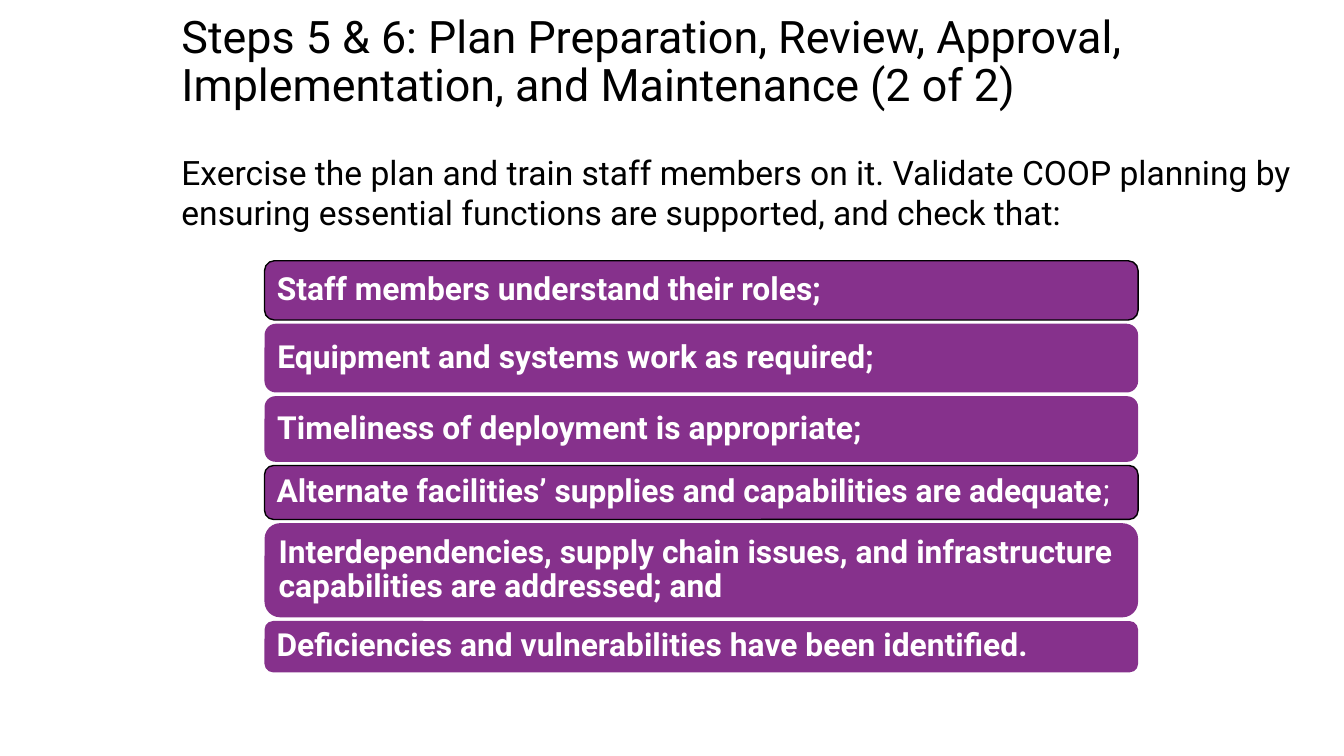
from dataclasses import dataclass

from pptx import Presentation
from pptx.dml.color import RGBColor
from pptx.enum.shapes import MSO_SHAPE as Preset
from pptx.enum.text import MSO_ANCHOR as Anchor, PP_ALIGN as Align
from pptx.util import Cm, Pt


@dataclass(frozen=True)
class Theme:
    font: str = "Roboto"
    text: RGBColor = RGBColor(0, 0, 0)
    bar: RGBColor = RGBColor(0x86, 0x31, 0x8C)
    bar_text: RGBColor = RGBColor(255, 255, 255)
    title_size: int = 24
    body_size: int = 18
    bar_size: int = 17


THEME = Theme()
TITLE = ("Steps 5 & 6: Plan Preparation, Review, Approval, "
         "Implementation, and Maintenance (2 of 2)")
INTRO = ("Exercise the plan and train staff members on it. Validate COOP planning by "
         "ensuring essential functions are supported, and check that:")
CHECKS = [
    (1.12, True, [("Staff members understand their roles;", True)]),
    (1.3, False, [("Equipment and systems work as required;", True)]),
    (1.24, False, [("Timeliness of deployment is appropriate;", True)]),
    (1.02, True, [("Alternate facilities’ supplies and capabilities are adequate", True),
                  (";", False)]),
    (1.78, False, [("Interdependencies, supply chain issues, and infrastructure "
                    "capabilities are addressed; and", True)]),
    (0.97, False, [("Deficiencies and vulnerabilities have been identified.", True)]),
]
BAR_LEFT, BAR_TOP, BAR_WIDTH, BAR_GAP = 5, 4.93, 16.51, 0.07
BAR_INSET = 0.18


def write_runs(frame, runs, size, color, anchor, line_spacing):
    frame.word_wrap = True
    frame.vertical_anchor = anchor
    paragraph = frame.paragraphs[0]
    paragraph.alignment = Align.LEFT
    paragraph.line_spacing = line_spacing
    for text, bold in runs:
        run = paragraph.add_run()
        run.text = text
        run.font.name = THEME.font
        run.font.size = Pt(size)
        run.font.bold = bold
        run.font.color.rgb = color


def add_text(slide, box, text, size, anchor, line_spacing):
    shape = slide.shapes.add_textbox(*map(Cm, box))
    write_runs(shape.text_frame, [(text, False)], size, THEME.text, anchor, line_spacing)


def add_bar(slide, top, height, outlined, runs):
    shape = slide.shapes.add_shape(
        Preset.ROUNDED_RECTANGLE, Cm(BAR_LEFT), Cm(top), Cm(BAR_WIDTH), Cm(height))
    shape.shadow.inherit = False
    shape.fill.solid()
    shape.fill.fore_color.rgb = THEME.bar
    if outlined:
        shape.line.color.rgb = THEME.text
        shape.line.width = Pt(0.75)
    else:
        shape.line.fill.background()
    frame = shape.text_frame
    frame.margin_left = frame.margin_right = Cm(BAR_INSET)
    frame.margin_top = frame.margin_bottom = Cm(BAR_INSET)
    write_runs(frame, runs, THEME.bar_size, THEME.bar_text, Anchor.MIDDLE, 0.9)


def main():
    """Build the plan maintenance slide with its stack of checks."""
    presentation = Presentation()
    presentation.slide_width, presentation.slide_height = Cm(25.4), Cm(14.29)
    slide = presentation.slides.add_slide(presentation.slide_layouts[6])
    add_text(slide, (3.18, 0, 18.34, 2.39), TITLE, THEME.title_size, Anchor.MIDDLE, 0.9)
    add_text(slide, (3.18, 2.74, 22.22, 9.42), INTRO, THEME.body_size, Anchor.TOP, 1.0)
    top = BAR_TOP
    for height, outlined, runs in CHECKS:
        add_bar(slide, top, height, outlined, runs)
        top += height + BAR_GAP
    presentation.save("out.pptx")


if __name__ == "__main__":
    main()
